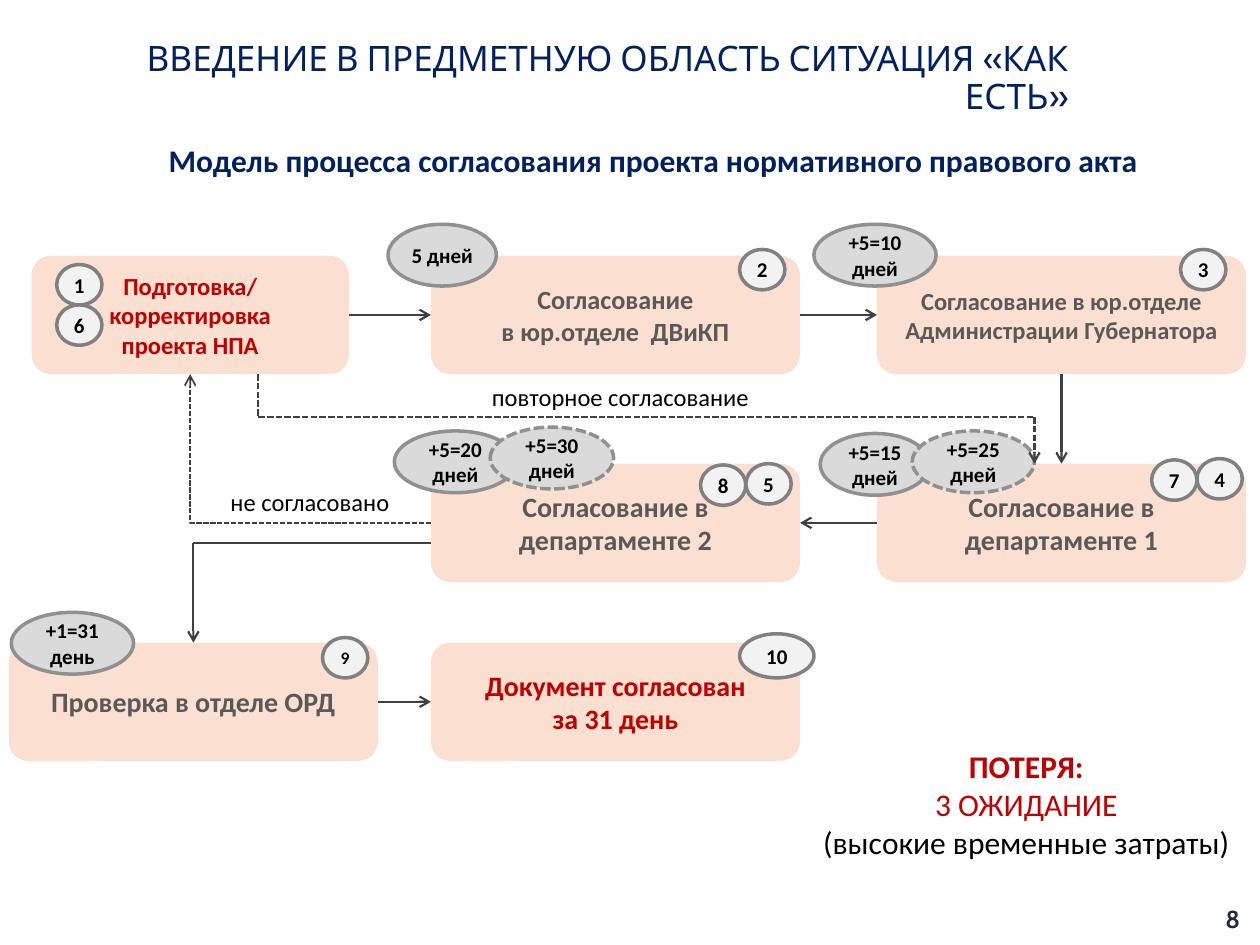
from dataclasses import dataclass

from pptx import Presentation
from pptx.dml.color import RGBColor
from pptx.enum.dml import MSO_LINE
from pptx.enum.shapes import MSO_CONNECTOR, MSO_SHAPE
from pptx.enum.text import MSO_ANCHOR, MSO_AUTO_SIZE, PP_ALIGN
from pptx.oxml.ns import qn
from pptx.oxml.xmlchemy import OxmlElement
from pptx.util import Inches, Pt

DASH = MSO_LINE.SQUARE_DOT
STRAIGHT, ELBOW = MSO_CONNECTOR.STRAIGHT, MSO_CONNECTOR.ELBOW
ROUNDED, OVAL = MSO_SHAPE.ROUNDED_RECTANGLE, MSO_SHAPE.OVAL
TOP, MIDDLE = MSO_ANCHOR.TOP, MSO_ANCHOR.MIDDLE
CENTER, RIGHT = PP_ALIGN.CENTER, PP_ALIGN.RIGHT
SIDE_TOP, SIDE_LEFT, SIDE_BOTTOM, SIDE_RIGHT = range(4)


@dataclass(frozen=True)
class Theme:
    heading_font: str = "Cabin"
    body_font: str = "Calibri"
    navy: str = "002060"
    red: str = "C00000"
    grey: str = "595959"
    black: str = "000000"
    page: str = "23263C"
    step_fill: str = "FBE0D1"
    days_fill: str = "DADADA"
    days_line: str = "909090"
    number_fill: str = "F2F2F2"
    number_line: str = "808080"
    arrow: str = "404040"
    title_size: int = 20
    lead_size: int = 18
    step_size: int = 16
    label_size: int = 14
    badge_size: int = 12


T = Theme()


def rgb(value):
    return RGBColor.from_string(value)


def write(shape, text, size, color, bold=False, font=T.body_font,
          align=CENTER, anchor=TOP, wrap=True):
    tf = shape.text_frame
    tf.text = text
    tf.word_wrap = wrap
    tf.vertical_anchor = anchor
    for p in tf.paragraphs:
        p.alignment = align
        for r in p.runs:
            r.font.size, r.font.bold, r.font.name = Pt(size), bold, font
            r.font.color.rgb = rgb(color)
    return tf


def add_text(s, box, text, size, color, **style):
    tb = s.shapes.add_textbox(*map(Inches, box))
    return write(tb, text, size, color, **style)


def add_filled(s, kind, box, fill):
    sp = s.shapes.add_shape(kind, *map(Inches, box))
    sp.shadow.inherit = False
    sp.fill.solid()
    sp.fill.fore_color.rgb = rgb(fill)
    sp.line.fill.background()
    return sp


def add_badge(s, box, text, fill, line, size=T.badge_size, dashed=False):
    sp = add_filled(s, OVAL, box, fill)
    sp.line.color.rgb = rgb(line)
    sp.line.width = Pt(2)
    if dashed:
        sp.line.dash_style = DASH
    tf = write(sp, text, size, T.black, bold=True, anchor=MIDDLE)
    tf.margin_left = tf.margin_right = tf.margin_top = tf.margin_bottom = 0


def add_step(s, box, text, size=T.step_size, color=T.grey, days=(), numbers=()):
    """Step box; each badge is (text, dx, dy, ...) from the top left corner."""
    x, y = box[:2]
    sp = add_filled(s, ROUNDED, box, T.step_fill)
    write(sp, text, size, color, bold=True, anchor=MIDDLE)
    for label, dx, dy, w, dashed in days:
        add_badge(s, (x + dx, y + dy, w, 0.49), label,
                  T.days_fill, T.days_line, dashed=dashed)
    for label, dx, dy, w, h, badge_size in numbers:
        add_badge(s, (x + dx, y + dy, w, h), label,
                  T.number_fill, T.number_line, badge_size)
    return sp


def number(label, dx, dy, w=0.36, h=0.32, size=T.badge_size):
    return label, dx, dy, w, h, size


def add_line(s, start=(0, 0), end=(0, 0), begin=None, finish=None,
             kind=STRAIGHT, width=1.25, dashed=False, arrow=True):
    """Line between points; begin and finish are (shape, side) joints."""
    conn = s.shapes.add_connector(kind, *map(Inches, (*start, *end)))
    if begin:
        conn.begin_connect(*begin)
    if finish:
        conn.end_connect(*finish)
    conn.line.color.rgb = rgb(T.arrow)
    conn.line.width = Pt(width)
    if dashed:
        conn.line.dash_style = DASH
    sp_pr = conn._element.spPr
    if kind == ELBOW:
        sp_pr.find(qn("a:prstGeom")).set("prst", "bentConnector2")
    if arrow:
        tail = OxmlElement("a:tailEnd")
        tail.set("type", "arrow")
        sp_pr.find(qn("a:ln")).append(tail)
    sp_pr.append(OxmlElement("a:effectLst"))


def add_header(s, x, y):
    title = s.shapes.title
    title.left, title.top = Inches(x + 0.38), Inches(y)
    title.width, title.height = Inches(7.57), Inches(0.44)
    tf = write(title, "ВВЕДЕНИЕ В ПРЕДМЕТНУЮ ОБЛАСТЬ СИТУАЦИЯ «КАК ЕСТЬ»",
               T.title_size, T.navy, font=T.heading_font, align=RIGHT)
    tf.auto_size = MSO_AUTO_SIZE.NONE
    tf.paragraphs[0].line_spacing = 0.9
    add_text(s, (x, y + 0.79, 9.11, 0.4),
             "Модель процесса согласования проекта нормативного правового акта",
             T.lead_size, T.navy, bold=True)


def add_flow(s, x, y):
    w, h = 2.93, 0.94
    left, mid, right = x, x + 3.35, x + 6.89
    row1, row2, row3 = y, y + 1.65, y + 3.07

    prepare = add_step(
        s, (left + 0.18, row1, 2.52, h), "Подготовка/\nкорректировка\nпроекта НПА",
        T.label_size, T.red, numbers=[number("1", 0.2, 0.07), number("6", 0.2, 0.39)])
    legal = add_step(
        s, (mid, row1, w, h), "Согласование\nв юр.отделе  ДВиКП", 15,
        days=[("5 дней", -0.34, -0.25, 0.86, False)],
        numbers=[number("2", 2.45, -0.05)])
    governor = add_step(
        s, (right, row1, w, h), "Согласование в юр.отделе\nАдминистрации Губернатора",
        T.label_size, days=[("+5=10 дней", -0.5, -0.25, 0.97, False)],
        numbers=[number("3", 2.41, -0.05)])
    dept1 = add_step(
        s, (right, row2, w, h), "Согласование в департаменте 1",
        days=[("+5=15 дней", -0.45, -0.24, 0.87, False),
              ("+5=25 дней", 0.28, -0.26, 0.97, True)],
        numbers=[number("7", 2.18, -0.03), number("4", 2.54, -0.04)])
    dept2 = add_step(
        s, (mid, row2, w, h), "Согласование в департаменте 2",
        days=[("+5=20 дней", -0.29, -0.26, 0.97, False),
              ("+5=30 дней", 0.47, -0.29, 0.98, True)],
        numbers=[number("8", 2.14, 0.01), number("5", 2.5, 0)])
    check = add_step(
        s, (left, row3, w, h), "Проверка в отделе ОРД",
        days=[("+1=31 день", 0.02, -0.24, 0.97, False)],
        numbers=[number("9", 2.49, -0.04, size=10)])
    done = add_step(
        s, (mid, row3, w, h), "Документ согласован\nза 31 день", color=T.red,
        numbers=[number("10", 2.45, -0.07, 0.59, 0.35)])

    for a, a_side, b, b_side in [(prepare, SIDE_RIGHT, legal, SIDE_LEFT),
                                 (legal, SIDE_RIGHT, governor, SIDE_LEFT),
                                 (governor, SIDE_BOTTOM, dept1, SIDE_TOP),
                                 (dept1, SIDE_LEFT, dept2, SIDE_RIGHT),
                                 (check, SIDE_RIGHT, done, SIDE_LEFT)]:
        add_line(s, begin=(a, a_side), finish=(b, b_side))
    add_line(s, begin=(dept2, SIDE_LEFT), finish=(prepare, SIDE_BOTTOM),
             kind=ELBOW, width=1, dashed=True)

    # Repeated approval: from preparation back to department 1
    repeat = [(left + 1.98, row1 + h), (left + 1.98, row1 + 1.28),
              (right + 1.25, row1 + 1.28), (right + 1.25, row2)]
    for i, (start, end) in enumerate(zip(repeat, repeat[1:])):
        add_line(s, start, end, dashed=True, arrow=i == 2)

    # Approved: from department 2 down to the check
    corner = (left + w / 2, row2 + 0.63)
    add_line(s, (mid, row2 + 0.63), corner, arrow=False)
    add_line(s, corner, finish=(check, SIDE_TOP))

    add_text(s, (x + 1.65, y + 1.79, 1.48, 0.34), "не согласовано",
             T.label_size, T.black, wrap=False)
    add_text(s, (x + 3.72, y + 0.95, 2.27, 0.34), "повторное согласование",
             T.label_size, T.black, wrap=False)


def add_loss(s, box):
    tf = add_text(s, box, "ПОТЕРЯ:\n3 ОЖИДАНИЕ\n(высокие временные затраты)",
                  T.lead_size, T.red)
    tf.paragraphs[0].runs[0].font.bold = True
    tf.paragraphs[2].runs[0].font.color.rgb = rgb(T.black)


def main():
    prs = Presentation()
    prs.slide_width, prs.slide_height = Inches(10), Inches(7.5)
    s = prs.slides.add_slide(prs.slide_layouts[5])
    add_header(s, 0.63, 0.28)
    add_flow(s, 0.07, 2.03)
    add_loss(s, (5.92, 5.88, 4.45, 1.01))
    add_text(s, (9.57, 7.14, 0.43, 0.31), "8", T.label_size, T.page,
             bold=True, font=T.heading_font, anchor=MIDDLE)
    prs.save("out.pptx")


if __name__ == "__main__":
    main()
